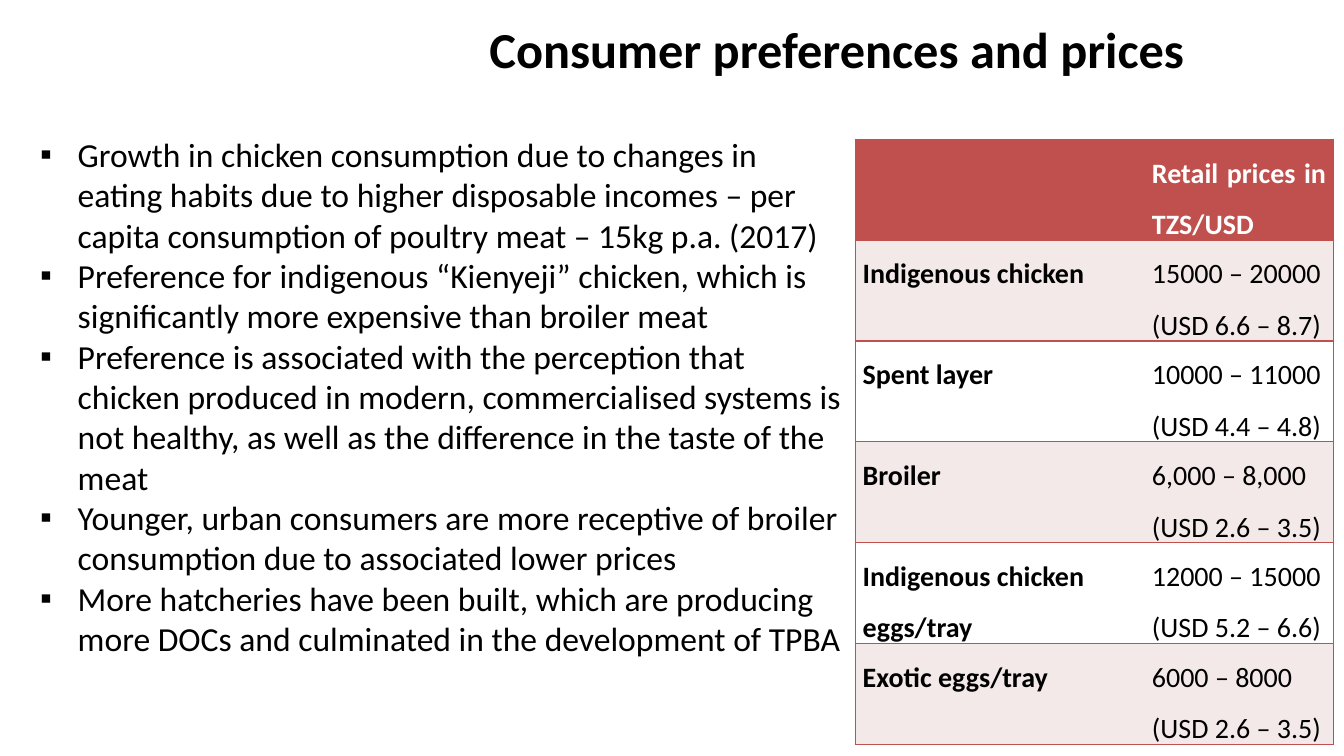
from lxml import etree
from pptx import Presentation
from pptx.dml.color import RGBColor
from pptx.enum.text import MSO_ANCHOR, PP_ALIGN
from pptx.oxml.ns import qn
from pptx.util import Cm, Pt

TOP = MSO_ANCHOR.TOP
LEFT, CENTER, JUSTIFY = PP_ALIGN.LEFT, PP_ALIGN.CENTER, PP_ALIGN.JUSTIFY
BLACK, WHITE, RED, PINK = "000000", "FFFFFF", "C0504D", "F4E9E9"
FONT = "Calibri"

BULLETS = [
    "Growth in chicken consumption due to changes in eating habits due to higher disposable "
    "incomes – per capita consumption of poultry meat – 15kg p.a. (2017)",
    "Preference for indigenous “Kienyeji” chicken, which is significantly more expensive "
    "than broiler meat",
    "Preference is associated with the perception that chicken produced in modern, "
    "commercialised systems is not healthy, as well as the difference in the taste of the meat",
    "Younger, urban consumers are more receptive of broiler consumption due to associated "
    "lower prices",
    "More hatcheries have been built, which are producing more DOCs and culminated in the "
    "development of TPBA",
]
PRICE_HEADER = "Retail prices in TZS/USD"
PRICES = [
    ("Indigenous chicken", "15000 – 20000", "(USD 6.6 – 8.7)"),
    ("Spent layer", "10000 – 11000", "(USD 4.4 – 4.8)"),
    ("Broiler", "6,000 – 8,000", "(USD 2.6 – 3.5)"),
    ("Indigenous chicken eggs/tray", "12000 – 15000", "(USD 5.2 – 6.6)"),
    ("Exotic eggs/tray", "6000 – 8000", "(USD 2.6 – 3.5)"),
]


def color(value):
    return RGBColor.from_string(value)


def write_text(frame, *texts, size, text_color=BLACK, bold=False, align=LEFT,
               line_spacing=1.0, bullet=None, indent=Cm(0.95)):
    """Write one paragraph per text, with an optional hanging bullet."""
    frame.word_wrap = True
    for index, text in enumerate(texts):
        paragraph = frame.paragraphs[0] if index == 0 else frame.add_paragraph()
        if bullet:
            properties = paragraph._p.get_or_add_pPr()
            properties.set("marL", str(indent))
            properties.set("indent", str(-indent))
            etree.SubElement(properties, qn("a:buFont"), typeface="Arial")
            etree.SubElement(properties, qn("a:buChar"), char=bullet)
        paragraph.alignment = align
        paragraph.line_spacing = line_spacing
        paragraph.space_before = paragraph.space_after = Pt(0)
        run = paragraph.add_run()
        run.text = text
        run.font.name = FONT
        run.font.size = Pt(size)
        run.font.bold = bold
        run.font.color.rgb = color(text_color)


def set_borders(cell, sides):
    """Draw the given sides (letters of L, R, T, B) in red and clear the others."""
    properties = cell._tc.get_or_add_tcPr()
    for side in "LRTB":
        line = etree.SubElement(properties, qn(f"a:ln{side}"), w=str(Pt(1)))
        if side in sides:
            fill = etree.SubElement(line, qn("a:solidFill"))
            etree.SubElement(fill, qn("a:srgbClr"), val=RED)
        else:
            etree.SubElement(line, qn("a:noFill"))


def add_title(slide, left, top, width, height):
    title = slide.shapes.title
    title.left, title.top, title.width, title.height = left, top, width, height
    title.text_frame.vertical_anchor = TOP
    write_text(title.text_frame, "Consumer preferences and prices", size=36, bold=True,
               align=CENTER)


def add_findings(slide, left, top, width, height):
    box = slide.shapes.add_textbox(left, top, width, height)
    write_text(box.text_frame, *BULLETS, size=24, bullet="▪")


def format_cell(cell, fill, sides, *texts, **text_format):
    set_borders(cell, sides)
    cell.fill.solid()
    cell.fill.fore_color.rgb = color(fill)
    cell.margin_left = cell.margin_right = Cm(0.18)
    cell.margin_top = cell.margin_bottom = 0
    write_text(cell.text_frame, *texts, size=20, line_spacing=1.5, **text_format)


def add_price_table(slide, left, top, width, height):
    row_count = len(PRICES) + 1
    table = slide.shapes.add_table(row_count, 2, left, top, width, height).table
    table.horz_banding = False
    table.columns[0].width = Cm(7.29)
    table.columns[1].width = width - Cm(7.29)
    for row in table.rows:
        row.height = height // row_count

    format_cell(table.cell(0, 0), RED, "LTB")
    format_cell(table.cell(0, 1), RED, "RTB", PRICE_HEADER, text_color=WHITE, bold=True,
                align=JUSTIFY)
    for index, (product, shillings, dollars) in enumerate(PRICES, start=1):
        band = PINK if index % 2 else WHITE
        format_cell(table.cell(index, 0), band, "LTB", product, bold=True)
        format_cell(table.cell(index, 1), band, "RTB", shillings, dollars)


def main():
    presentation = Presentation()
    presentation.slide_width, presentation.slide_height = Cm(33.87), Cm(19.05)
    slide = presentation.slides.add_slide(presentation.slide_layouts[5])
    add_findings(slide, Cm(0.76), Cm(3.25), Cm(20.8), Cm(13.59))
    add_title(slide, Cm(9.68), Cm(0.33), Cm(22.83), Cm(3.18))
    add_price_table(slide, Cm(21.56), Cm(3.51), Cm(12.04), Cm(15.24))
    presentation.save("out.pptx")


if __name__ == "__main__":
    main()
